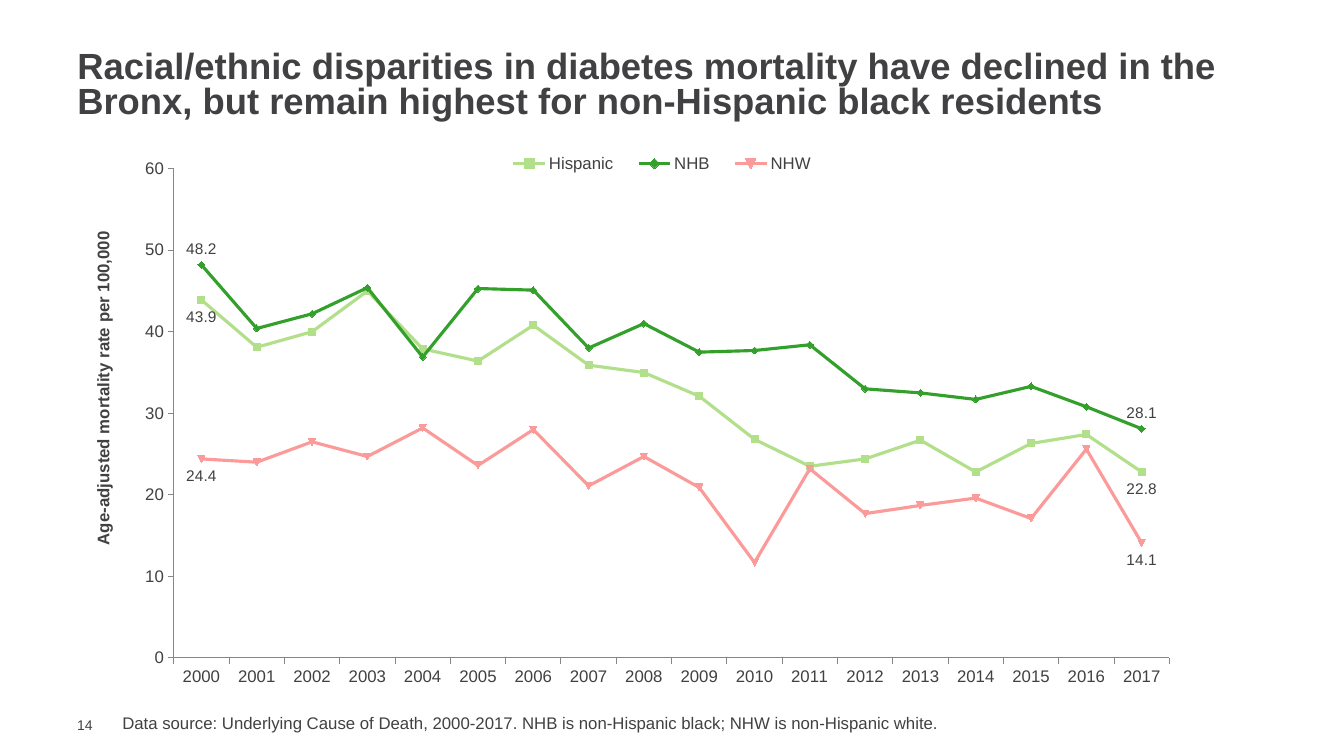
"""Build the slide on diabetes mortality in the Bronx by race and ethnicity."""
from dataclasses import dataclass

from lxml import etree
from pptx import Presentation
from pptx.chart.axis import CategoryAxis, ValueAxis
from pptx.chart.chart import Chart
from pptx.chart.data import CategoryChartData
from pptx.chart.series import LineSeries
from pptx.dml.color import RGBColor
from pptx.enum.chart import (
    XL_CHART_TYPE,
    XL_LABEL_POSITION,
    XL_LEGEND_POSITION,
    XL_TICK_MARK,
)
from pptx.enum.text import MSO_ANCHOR, MSO_AUTO_SIZE, PP_ALIGN
from pptx.oxml.ns import qn
from pptx.slide import Slide
from pptx.text.text import Font, TextFrame
from pptx.util import Emu, Pt

PX = 9525
FONT = "Arial"
INK = RGBColor(0x41, 0x40, 0x42)
AXIS_GRAY = RGBColor(0x86, 0x86, 0x86)
LIGHT_GREEN = RGBColor(0xB2, 0xDF, 0x8A)
GREEN = RGBColor(0x33, 0xA0, 0x2C)
PINK = RGBColor(0xFB, 0x9A, 0x99)
WHITE = RGBColor(0xFF, 0xFF, 0xFF)

LINE_MARKERS = XL_CHART_TYPE.LINE_MARKERS
ABOVE = XL_LABEL_POSITION.ABOVE
BELOW = XL_LABEL_POSITION.BELOW
LEGEND_TOP = XL_LEGEND_POSITION.TOP
TICK_OUTSIDE = XL_TICK_MARK.OUTSIDE
TICK_NONE = XL_TICK_MARK.NONE
MIDDLE = MSO_ANCHOR.MIDDLE
TOP = MSO_ANCHOR.TOP
NO_AUTOFIT = MSO_AUTO_SIZE.NONE
LEFT = PP_ALIGN.LEFT

TITLE_ONLY = 5
YEARS = range(2000, 2018)


@dataclass(frozen=True)
class Box:
    """A rectangle in px."""

    left: int
    top: int
    width: int
    height: int

    def emu(self) -> tuple[Emu, Emu, Emu, Emu]:
        """Return the four lengths in EMU."""
        return (Emu(self.left * PX), Emu(self.top * PX),
                Emu(self.width * PX), Emu(self.height * PX))


@dataclass(frozen=True)
class Group:
    """Mortality rates of one population group."""

    name: str
    color: RGBColor
    label_position: XL_LABEL_POSITION
    rates: tuple[float, ...]


@dataclass(frozen=True)
class Note:
    """A small line of text at the foot of the slide."""

    box: Box
    text: str
    size: int
    anchor: MSO_ANCHOR
    inset_y: int


GROUPS = (
    Group("Hispanic", LIGHT_GREEN, BELOW,
          (43.9, 38.1, 40, 45, 37.9, 36.4, 40.8, 35.9, 35,
           32.1, 26.8, 23.5, 24.4, 26.7, 22.8, 26.3, 27.4, 22.8)),
    Group("NHB", GREEN, ABOVE,
          (48.2, 40.4, 42.2, 45.4, 36.9, 45.3, 45.1, 38, 41,
           37.5, 37.7, 38.4, 33, 32.5, 31.7, 33.3, 30.8, 28.1)),
    Group("NHW", PINK, BELOW,
          (24.4, 24, 26.5, 24.7, 28.2, 23.6, 28, 21.1, 24.7,
           20.9, 11.7, 23.2, 17.7, 18.7, 19.6, 17.1, 25.6, 14.1)),
)
NOTES = (
    Note(Box(64, 682, 41, 16), "14", 10, MIDDLE, 0),
    Note(Box(107, 674, 932, 29),
         "Data source: Underlying Cause of Death, 2000-2017. "
         "NHB is non-Hispanic black; NHW is non-Hispanic white.", 12, TOP, 5),
)
HEADLINE = ("Racial/ethnic disparities in diabetes mortality have declined in the "
            "Bronx, but remain highest for non-Hispanic black residents")
HEADLINE_BOX = Box(64, 44, 1152, 77)
CHART_BOX = Box(64, 137, 1069, 537)


def style_font(font: Font, size: int, bold: bool = False) -> None:
    """Set the face, size, weight and colour of a font."""
    font.name = FONT
    font.size = Pt(size)
    font.bold = bold
    font.color.rgb = INK


def add_run(frame: TextFrame, text: str, size: int, bold: bool = False) -> None:
    """Add one styled run to the first paragraph."""
    run = frame.paragraphs[0].add_run()
    run.text = text
    style_font(run.font, size, bold)


def add_headline(slide: Slide) -> None:
    """Place and fill the title placeholder."""
    headline = slide.shapes.title
    headline.left, headline.top, headline.width, headline.height = HEADLINE_BOX.emu()
    frame = headline.text_frame
    frame.auto_size = NO_AUTOFIT
    frame.vertical_anchor = MIDDLE
    frame.paragraphs[0].alignment = LEFT
    frame.paragraphs[0].line_spacing = 0.8
    add_run(frame, HEADLINE, 26, True)


def add_note(slide: Slide, note: Note) -> None:
    """Add one line of foot text."""
    frame = slide.shapes.add_textbox(*note.box.emu()).text_frame
    frame.word_wrap = True
    frame.vertical_anchor = note.anchor
    frame.margin_top = frame.margin_bottom = Emu(note.inset_y * PX)
    if note.inset_y == 0:
        frame.margin_right = 0
    add_run(frame, note.text, note.size)


def set_layout(parent: etree.ElementBase, index: int, **settings: str | float) -> None:
    """Give a chart part a manual layout at the given child index."""
    for old in parent.findall(qn("c:layout")):
        parent.remove(old)
    layout = etree.Element(qn("c:layout"))
    manual = etree.SubElement(layout, qn("c:manualLayout"))
    for tag, value in settings.items():
        etree.SubElement(manual, qn(f"c:{tag}")).set("val", str(value))
    parent.insert(index, layout)


def style_axis(axis: CategoryAxis | ValueAxis) -> None:
    """Format the line, ticks and labels of an axis."""
    axis.has_major_gridlines = False
    axis.major_tick_mark = TICK_OUTSIDE
    axis.minor_tick_mark = TICK_NONE
    axis.format.line.color.rgb = AXIS_GRAY
    axis.format.line.width = Pt(0.75)
    style_font(axis.tick_labels.font, 12)


def style_series(series: LineSeries, group: Group) -> None:
    """Colour a line and label its first and last points."""
    series.smooth = False
    series.format.line.color.rgb = group.color
    series.format.line.width = Pt(2.25)
    series.marker.size = 5
    series.marker.format.fill.solid()
    series.marker.format.fill.fore_color.rgb = group.color
    series.marker.format.line.color.rgb = group.color
    series.data_labels.show_value = False
    for index in (0, len(group.rates) - 1):
        label = series.points[index].data_label
        style_font(label.font, 11)
        label.position = group.label_position


def add_rate_title(axis: ValueAxis) -> None:
    """Add the upright title of the value axis."""
    axis.has_title = True
    add_run(axis.axis_title.text_frame, "Age-adjusted mortality rate per 100,000", 12, True)
    title = axis.axis_title._element
    body = title.find(".//" + qn("a:bodyPr"))
    body.set("rot", "-5400000")
    body.set("vert", "horz")
    set_layout(title, 1, xMode="edge", yMode="edge", x=0.02, y=0.15)


def add_legend(chart: Chart) -> None:
    """Add the legend above the lines."""
    chart.has_legend = True
    chart.legend.position = LEGEND_TOP
    chart.legend.include_in_layout = False
    style_font(chart.legend.font, 12)
    set_layout(chart.legend._element, 1, xMode="edge", yMode="edge",
               x=0.38, y=0.01, w=0.3, h=0.05)


def add_rate_chart(slide: Slide) -> None:
    """Add the line chart of mortality rates."""
    rates = CategoryChartData()
    rates.categories = [str(year) for year in YEARS]
    for group in GROUPS:
        rates.add_series(group.name, group.rates)
    chart = slide.shapes.add_chart(LINE_MARKERS, *CHART_BOX.emu(), rates).chart
    chart.has_title = False
    style_font(chart.font, 18)
    chart.plots[0].vary_by_categories = False
    for axis in (chart.category_axis, chart.value_axis):
        style_axis(axis)
    chart.value_axis.minimum_scale = 0
    chart.value_axis.maximum_scale = 60
    chart.value_axis.major_unit = 10
    add_rate_title(chart.value_axis)
    for series, group in zip(chart.plots[0].series, GROUPS):
        style_series(series, group)
    add_legend(chart)
    set_layout(chart._chartSpace.find(".//" + qn("c:plotArea")), 0, layoutTarget="inner",
               xMode="edge", yMode="edge", x=0.095, y=0.044, w=0.887, h=0.868)


def main() -> None:
    """Build and save the presentation."""
    deck = Presentation()
    deck.slide_width, deck.slide_height = Emu(1280 * PX), Emu(720 * PX)
    slide = deck.slides.add_slide(deck.slide_layouts[TITLE_ONLY])
    slide.background.fill.solid()
    slide.background.fill.fore_color.rgb = WHITE
    add_headline(slide)
    add_rate_chart(slide)
    for note in NOTES:
        add_note(slide, note)
    deck.save("out.pptx")


if __name__ == "__main__":
    main()
